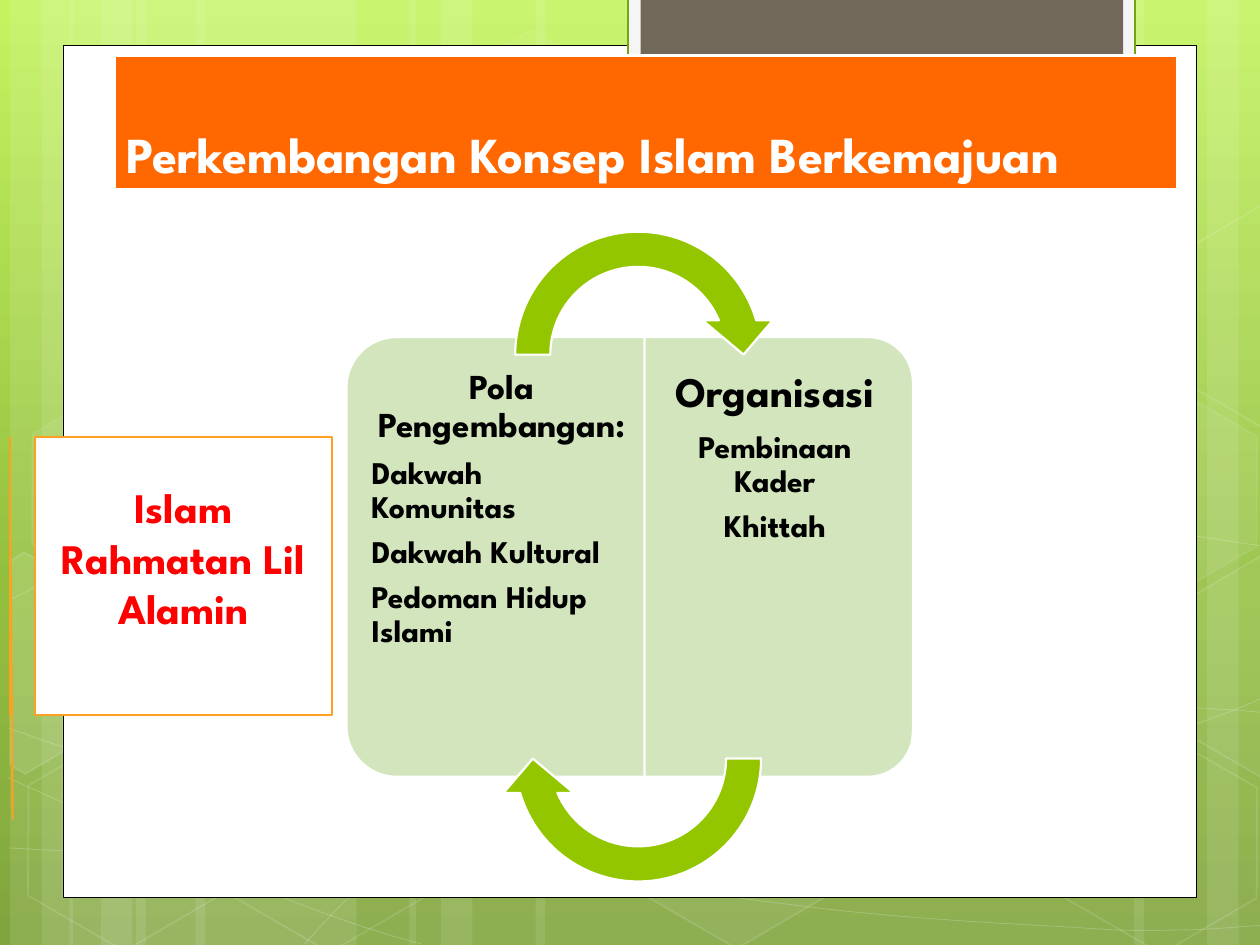
from dataclasses import dataclass
from math import cos, radians, sin
from typing import NamedTuple

from lxml.etree import SubElement
from pptx import Presentation
from pptx.dml.color import RGBColor
from pptx.enum.shapes import MSO_SHAPE as Shape
from pptx.enum.text import MSO_ANCHOR as Anchor, PP_ALIGN as Align
from pptx.oxml.ns import qn
from pptx.util import Emu, Inches, Pt

# Slide grid: 100 columns by 75 rows
W, H = Inches(10), Inches(7.5)
COLS, ROWS = 100, 75
TILT = 30


@dataclass(frozen=True)
class Theme:
    font: str = "League Spartan"
    white: str = "FFFFFF"
    black: str = "000000"
    red: str = "FF0000"
    orange: str = "FF6700"
    amber: str = "FEA022"
    green: str = "94C600"
    dark_green: str = "74A510"
    pale_green: str = "D2E5BD"
    pale_grey: str = "F5F5F5"
    brown: str = "71685A"
    sky: tuple = ((0, "C3F35F"), (62, "93BF3F"), (100, "81A53E"))
    title: float = 28.8
    large: float = 24
    medium: float = 20
    body: float = 18
    edge: float = 1.25


T = Theme()


class Box(NamedTuple):
    x: float
    y: float
    w: float
    h: float


class Line(NamedTuple):
    color: str
    width: float
    alpha: int = 100


class Para(NamedTuple):
    text: str
    size: float
    color: str = T.black
    align: Align = Align.CENTER


class Hexagon(NamedTuple):
    x: float
    y: float
    fill: int
    line: int


class CutHexagon(NamedTuple):
    center: tuple
    points: list
    fill: int


class Card(NamedTuple):
    box: Box
    turn: int
    text_box: Box
    insets: tuple
    paras: tuple


def col(n: float) -> Emu:
    return Emu(round(W * n / COLS))


def row(n: float) -> Emu:
    return Emu(round(H * n / ROWS))


def place(b: Box) -> tuple:
    return col(b.x), row(b.y), col(b.w), row(b.h)


def paint(fill, color: str | None, alpha: int = 100) -> None:
    if color is None:
        fill.background()
        return
    fill.solid()
    fill.fore_color.rgb = RGBColor.from_string(color)
    if alpha < 100:
        clr = fill._xPr.find(qn("a:solidFill"))[0]
        SubElement(clr, qn("a:alpha"), val=str(alpha * 1000))


def style(sp, fill: str | None, alpha: int = 100, line: Line | None = None) -> None:
    sp.shadow.inherit = False
    paint(sp.fill, fill, alpha)
    paint(sp.line.fill, line and line.color, line.alpha if line else 100)
    if line:
        sp.line.width = Pt(line.width)


def add_shape(s, kind, box: Box, fill, alpha=100, line=None, turn=0, adj=()):
    sp = s.shapes.add_shape(kind, *place(box))
    style(sp, fill, alpha, line)
    sp.rotation = turn
    for i, value in enumerate(adj):
        sp.adjustments[i] = value
    return sp


def add_outline(s, points: list, line: Line, fill=None, alpha=100, close=False):
    pts = [(col(x), row(y)) for x, y in points]
    fb = s.shapes.build_freeform(*pts[0])
    fb.add_line_segments(pts[1:], close=close)
    sp = fb.convert_to_shape()
    style(sp, fill, alpha, line)
    return sp


def add_wave(s, points: list) -> None:
    """Draw a chain of cubic Bezier segments, three points each."""
    sp = add_outline(s, points, Line(T.white, 0.5, 20))
    steps = list(sp._element.iter(qn("a:lnTo")))
    for i in range(0, len(steps), 3):
        steps[i].tag = qn("a:cubicBezTo")
        for step in steps[i + 1:i + 3]:
            steps[i].append(step[0])
            step.getparent().remove(step)


def add_cut_hexagon(s, cut: CutHexagon) -> None:
    (cx, cy), c, k = cut.center, cos(radians(TILT)), sin(radians(TILT))
    level = [(cx + (x - cx) * c + (y - cy) * k, cy - (x - cx) * k + (y - cy) * c)
             for x, y in cut.points]
    sp = add_outline(s, level, Line(T.white, 1, 12), T.white if cut.fill else None, cut.fill, True)
    sp.rotation = TILT


def write(sp, paras, anchor, insets=(0.1, 0.05, 0.1, 0.05), spacing=None, after=0.0) -> None:
    tf = sp.text_frame
    tf.word_wrap, tf.vertical_anchor = True, anchor
    tf.margin_left, tf.margin_top, tf.margin_right, tf.margin_bottom = map(Inches, insets)
    tf.text = "\n".join(para.text for para in paras)
    for p, para in zip(tf.paragraphs, paras):
        p.alignment, p.line_spacing, p.space_after = para.align, spacing, Pt(para.size * after)
        font = p.runs[0].font
        font.name, font.size, font.bold = T.font, Pt(para.size), True
        font.color.rgb = RGBColor.from_string(para.color)


def add_background(s) -> None:
    fill = s.background.fill
    fill.gradient()
    fill.gradient_angle = 270
    stops = next(s.element.iter(qn("a:gsLst")))
    for stop in list(stops):
        stops.remove(stop)
    for pos, color in T.sky:
        gs = SubElement(stops, qn("a:gs"), pos=str(pos * 1000))
        SubElement(gs, qn("a:srgbClr"), val=color)


def add_backdrop(s) -> None:
    # Light vertical bands
    trio = ((10.8, 17.5), (0.8, 5), (3.3, 8.3))
    bands = [(x + shift, w, 0) for shift in (0, 4.7) for x, w in trio]
    bands += [(73.3, 17.5, 180), (95.8, 5, 180), (90, 8.3, 180)]
    bands += [(42.5, 30.8, 0), (32.5, 5, 0), (35, 8.3, 0)]
    for x, w, turn in bands:
        add_shape(s, Shape.RECTANGLE, Box(x, 0, w, ROWS), T.white, 10, turn=turn)
    # Thin waves, then hexagons, whole and cut by the slide edge
    for points in WAVES:
        add_wave(s, points)
    for hx in HEXAGONS:
        add_shape(s, Shape.HEXAGON, Box(hx.x, hx.y, 17.5, 15.2), T.white if hx.fill else None,
                  hx.fill, Line(T.white, 1, hx.line), TILT, (0.285, 1.155))
    for cut in CUT_HEXAGONS:
        add_cut_hexagon(s, cut)


WAVES = (
    [(0.7, 67.3), (6.1, 67.6), (11.5, 67.9), (19, 67.8), (26.5, 67.7), (35.8, 67.5), (45.8, 66.5),
     (55.8, 65.5), (70, 63.6), (79.2, 61.7), (88.3, 59.8), (97.7, 56.8), (100.7, 55.1)],
    [(0.7, 47.7), (3.6, 46.1), (6.5, 44.6), (12.1, 43.1), (17.8, 41.6), (25.9, 39.4), (34.7, 38.7),
     (43.6, 38), (54.4, 37.9), (65.4, 38.7), (76.4, 39.5), (94.7, 42.6), (100.7, 43.4)],
    [(0.6, 61.7), (12.7, 67.2), (24.7, 72.7), (33.4, 74.9)],
    [(0.7, 57.8), (3.8, 58.9), (7, 60), (12.8, 61.6), (18.6, 63.1), (27.3, 65.6), (35.7, 67.3),
     (44, 69), (54.5, 70.8), (62.8, 71.8), (71.1, 72.9), (80, 73.3), (85.3, 73.6),
     (90.5, 74), (91.9, 73.8), (94.5, 73.8), (97.1, 73.7), (98.9, 73.5), (100.7, 73.4)],
    [(24.2, 74.9), (26, 72.9), (27.8, 70.9), (30.2, 69.1), (32.6, 67.3), (36, 65.3), (38.8, 63.9),
     (41.6, 62.5), (43.3, 61.9), (47, 60.9), (50.6, 59.9), (57.3, 58.5), (60.8, 57.8),
     (64.4, 57.1), (64.9, 57.1), (68, 56.9), (71.1, 56.6), (76, 56.3), (79.4, 56.2),
     (82.9, 56.1), (88.6, 56.2), (88.6, 56.2), (88.6, 56.2), (95.3, 56.2), (95.3, 56.2),
     (97.1, 56.3), (98.8, 56.4), (99.7, 56.5), (100.6, 56.6), (100.3, 56.5), (100.6, 56.6)],
)
HEXAGONS = (
    Hexagon(33.4, 3.6, 4, 8), Hexagon(49.7, 58.9, 6, 12), Hexagon(1.1, 59.1, 0, 12),
    Hexagon(1.4, 31.2, 7, 8), Hexagon(17.4, 59.2, 0, 12), Hexagon(75.3, 45.3, 10, 12),
    Hexagon(83.4, 59.3, 0, 12), Hexagon(83.4, 31.4, 7, 8),
)
RIGHT_CUT = [(92.6, 48.5), (100.1, 44.1), (100.9, 44.6), (100.9, 61.3), (100.2, 61.7), (92.6, 57.3)]
CUT_HEXAGONS = (
    CutHexagon((3.6, 53.5), [(0.8, 44.5), (1.9, 43.8), (9.6, 48.2), (9.5, 57), (2, 61.4),
                             (0.8, 60.7)], 10),
    CutHexagon((98.5, 52), RIGHT_CUT, 4),
    CutHexagon((98.5, 24.2), [(x, y - 27.8) for x, y in RIGHT_CUT], 0),
)
CARDS = (
    Card(Box(22, 32.25, 34.9, 23.9), 270, Box(28.7, 27.9, 22.7, 32.6), (0.08, 0.14, 0.12, 0.14), (
        Para("Pola Pengembangan:", T.medium),
        *(Para(text, T.body, align=Align.LEFT)
          for text in ("Dakwah Komunitas", "Dakwah Kultural", "Pedoman Hidup Islami")))),
    Card(Box(44.35, 33.55, 34.9, 21.3), 90, Box(51.1, 27.75, 20.3, 32.8), (0.15, 0.17, 0.1, 0.17), (
        Para("Organisasi", T.large), Para("Pembinaan Kader", T.body), Para("Khittah", T.body))),
)


def main() -> None:
    prs = Presentation()
    prs.slide_width, prs.slide_height = W, H
    s = prs.slides.add_slide(prs.slide_layouts[6])
    add_background(s)
    add_backdrop(s)

    # White page and top tab
    for box, fill, line in (
        (Box(5, 3.6, 90, 67.65), T.white, Line(T.black, 0.5)),
        (Box(49.85, -0.2, 40.2, 7.6), T.pale_grey, Line(T.dark_green, T.edge)),
        (Box(50.85, -0.2, 38.3, 6.8), T.brown, None),
    ):
        add_shape(s, Shape.RECTANGLE, box, fill, line=line)

    # Title
    title = add_shape(s, Shape.RECTANGLE, Box(9.1, 4.4, 84.4, 10.65), T.orange,
                      line=Line(T.white, 1.75))
    write(title, [Para("Perkembangan Konsep Islam Berkemajuan", T.title, T.white, Align.LEFT)],
          Anchor.BOTTOM)

    # Two facing cards
    white_edge = Line(T.white, T.edge)
    for card in CARDS:
        add_shape(s, Shape.ROUND_2_SAME_RECTANGLE, card.box, T.pale_green, line=white_edge,
                  turn=card.turn, adj=(0.167, 0))
        tb = s.shapes.add_textbox(*place(card.text_box))
        write(tb, card.paras, Anchor.TOP, card.insets, 0.9, 0.35)

    # Cycle arrows above and below
    for y, turn in ((17, 0), (49.05, 180)):
        add_shape(s, Shape.CIRCULAR_ARROW, Box(39.5, y, 22.3, 22.3), T.green, line=white_edge,
                  turn=turn, adj=(0.125, 11.423, 204.577, 108, 0.125))

    # Callout
    callout = add_shape(s, Shape.LINE_CALLOUT_1_BORDER_AND_ACCENT_BAR, Box(2.75, 34.7, 23.6, 22.05),
                        T.white, line=Line(T.amber, T.edge), adj=(0.188, -0.083, 1.376, -0.074))
    write(callout, [Para("Islam Rahmatan Lil Alamin", T.large, T.red)], Anchor.MIDDLE,
          (0.1, 0.05, 0.1, 0.35))

    prs.save("out.pptx")


if __name__ == "__main__":
    main()
